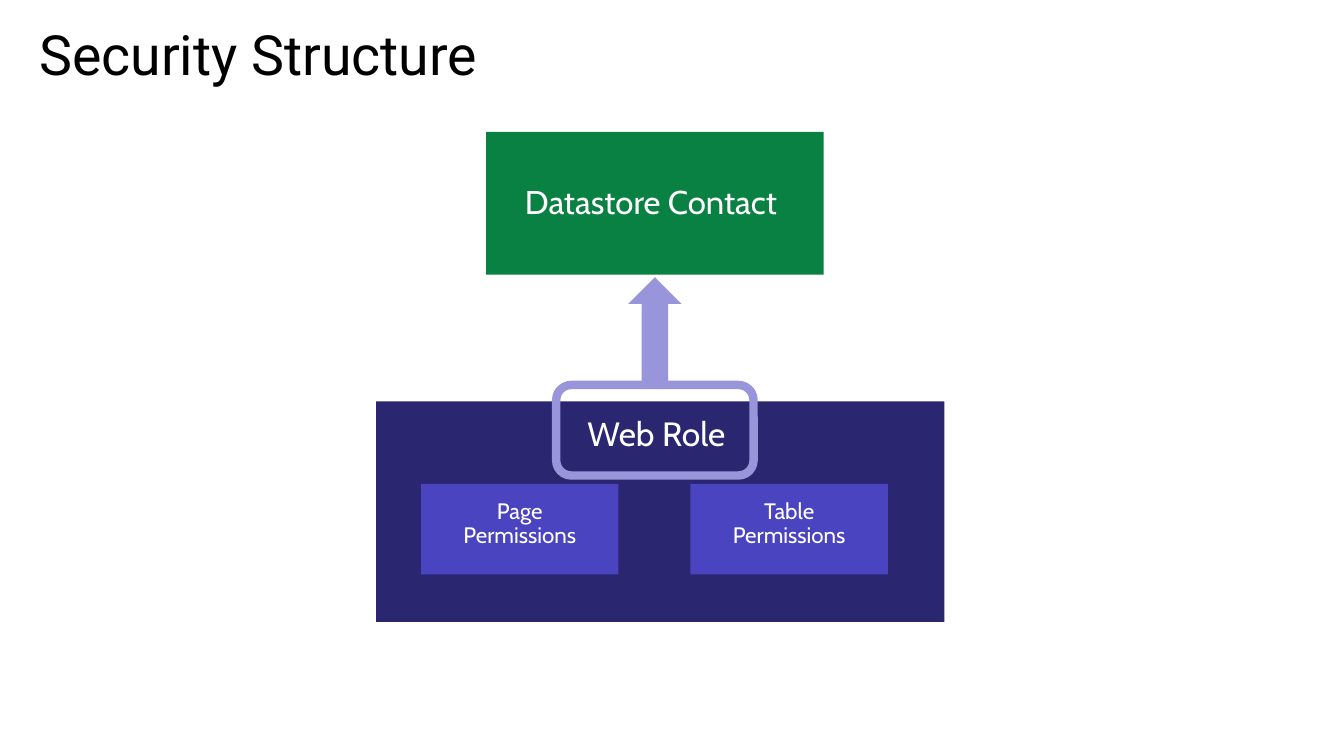
import pptx
import pptx.util
import pptx.dml.color
import pptx.enum.shapes
import pptx.enum.text
from dataclasses import dataclass

Pt = pptx.util.Pt
SHAPE = pptx.enum.shapes.MSO_SHAPE
ANCHOR = pptx.enum.text.MSO_ANCHOR
ALIGN = pptx.enum.text.PP_ALIGN


@dataclass(frozen=True)
class Theme:
    black: str = "000000"
    white: str = "FFFFFF"
    green: str = "088142"
    navy: str = "2A2670"
    violet: str = "4B44C0"
    lilac: str = "9895DB"
    title_font: str = "Roboto"
    body_font: str = "Cabin"
    title_size: float = 39.6
    contact_size: float = 23.5
    role_size: float = 24
    permission_size: float = 16


THEME = Theme()


def rgb(value):
    return pptx.dml.color.RGBColor.from_string(value)


def add_block(slide, kind, x, y, w, h, fill=None, line=None, line_width=0):
    sp = slide.shapes.add_shape(kind, Pt(x), Pt(y), Pt(w), Pt(h))
    sp.shadow.inherit = False
    if fill:
        sp.fill.solid()
        sp.fill.fore_color.rgb = rgb(fill)
    else:
        sp.fill.background()
    if line:
        sp.line.color.rgb = rgb(line)
        sp.line.width = Pt(line_width)
    else:
        sp.line.fill.background()
    return sp


def write(sp, text, font, size, color, align, anchor, insets):
    tf = sp.text_frame
    tf.word_wrap = True
    tf.vertical_anchor = anchor
    tf.margin_left, tf.margin_top, tf.margin_right, tf.margin_bottom = map(Pt, insets)
    p = tf.paragraphs[0]
    p.alignment = align
    p.line_spacing = 0.9
    r = p.add_run()
    r.text = text
    r.font.name = font
    r.font.size = Pt(size)
    r.font.color.rgb = rgb(color)


def label(sp, text, size, anchor=ANCHOR.TOP, right=14.4):
    write(sp, text, THEME.body_font, size, THEME.white, ALIGN.CENTER, anchor,
          (14.4, 11.5, right, 11.5))


def add_title(slide, x, y, w, h):
    sp = slide.shapes.add_textbox(Pt(x), Pt(y), Pt(w), Pt(h))
    write(sp, "Security Structure", THEME.title_font, THEME.title_size, THEME.black,
          ALIGN.LEFT, ANCHOR.MIDDLE, (7.2, 3.6, 7.2, 3.6))


def add_contact(slide, x, y, w, h):
    sp = add_block(slide, SHAPE.RECTANGLE, x, y, w, h, THEME.green)
    label(sp, "Datastore Contact", THEME.contact_size, ANCHOR.MIDDLE, right=20)


def add_role_panel(slide, x, y, w, h):
    # Panel with the role name at its top
    sp = add_block(slide, SHAPE.RECTANGLE, x, y, w, h, THEME.navy)
    label(sp, "Web Role", THEME.role_size, right=20)

    # Permission boxes
    box_w, box_h, pitch = 141, 64.7, 192.4
    for i, text in enumerate(("Page Permissions", "Table Permissions")):
        sp = add_block(slide, SHAPE.RECTANGLE, x + 32.2 + i * pitch, y + 59,
                       box_w, box_h, THEME.violet)
        label(sp, text, THEME.permission_size)


def add_role_link(slide, x, y, w, h):
    # Frame at the foot of the box, arrow centred above it
    frame_h, arrow_w = 64.7, 38.2
    arrow_h = h - frame_h
    add_block(slide, SHAPE.ROUNDED_RECTANGLE, x, y + arrow_h, w, frame_h,
              line=THEME.lilac, line_width=6)
    add_block(slide, SHAPE.UP_ARROW, x + (w - arrow_w) / 2, y, arrow_w, arrow_h,
              THEME.lilac)


def main():
    prs = pptx.Presentation()
    prs.slide_width, prs.slide_height = Pt(960), Pt(540)
    slide = prs.slides.add_slide(prs.slide_layouts[6])
    add_role_panel(slide, 268.6, 286.6, 406, 157.7)
    add_title(slide, 21, 23, 917, 36)
    add_contact(slide, 347.3, 94.3, 241, 102)
    add_role_link(slide, 397.3, 198, 141, 141.7)
    prs.save("out.pptx")


if __name__ == "__main__":
    main()
